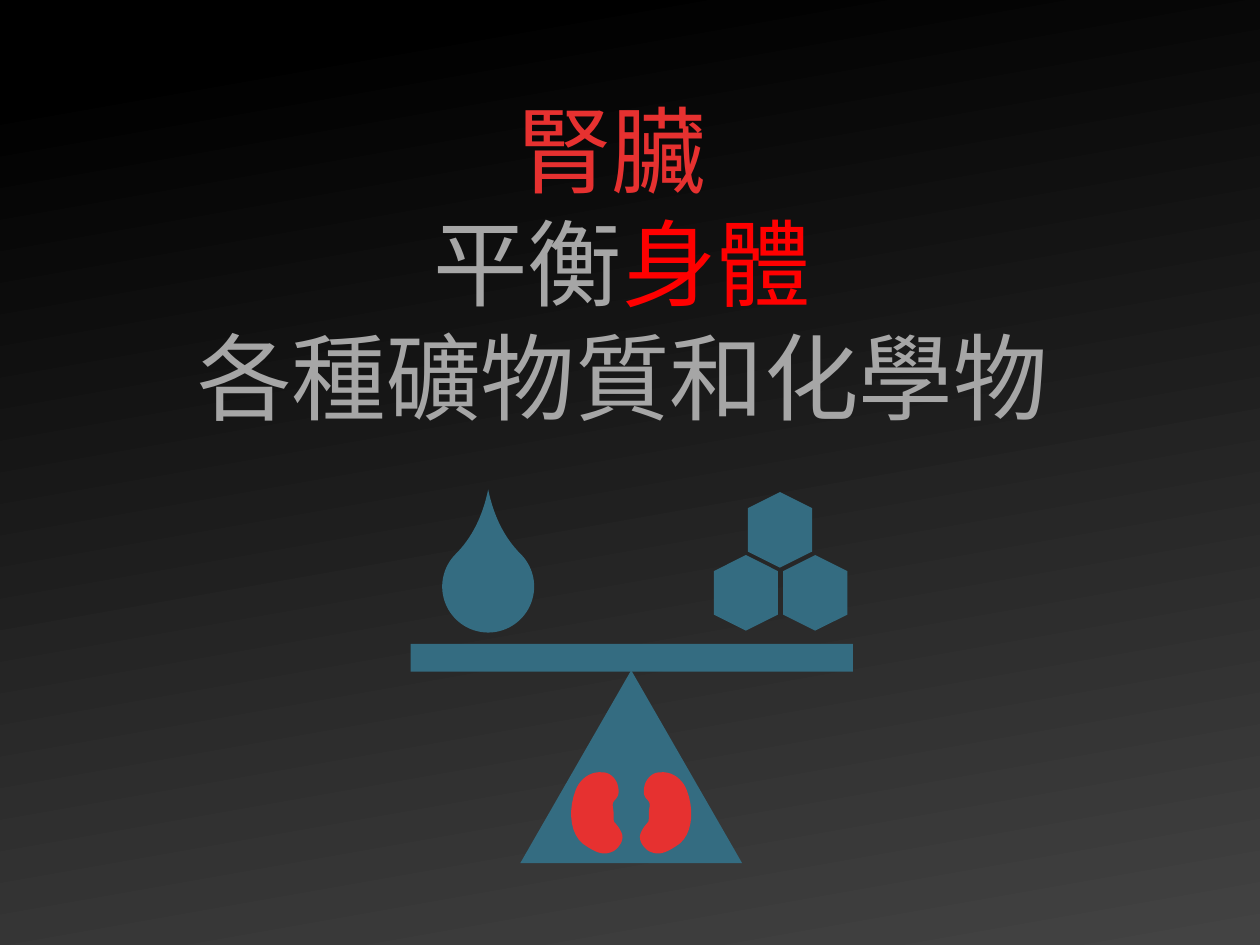
from pptx import Presentation
from pptx import util as u
from pptx.dml.color import RGBColor
from pptx.enum import shapes, text

PX = u.Inches(1) // 100
TEAL, KIDNEY_RED, GREY = "346C81", "E63130", "A6A6A6"
SHAPE = shapes.MSO_SHAPE


def paint(part, colour):
    part.fill.solid()
    part.fill.fore_color.rgb = RGBColor.from_string(colour)
    part.line.fill.background()
    part.shadow.inherit = False


def add_part(parent, kind, left, top, width, height, rotation=0):
    part = parent.shapes.add_shape(kind, left * PX, top * PX, width * PX, height * PX)
    part.rotation = rotation
    paint(part, TEAL)
    return part


prs = Presentation()
prs.slide_width, prs.slide_height = 1000 * PX, 750 * PX
slide = prs.slides.add_slide(prs.slide_layouts[6])

backdrop = slide.background.fill
backdrop.gradient()
backdrop.gradient_angle = 280
for stop, (position, colour) in zip(backdrop.gradient_stops, [(0.08, "000000"), (1, "434343")]):
    stop.position = position
    stop.color.rgb = RGBColor.from_string(colour)

headline = slide.shapes.add_textbox(36 * PX, 68 * PX, 916 * PX, 283 * PX).text_frame
headline.word_wrap = True
headline.auto_size = text.MSO_AUTO_SIZE.SHAPE_TO_FIT_TEXT
first, second = headline.paragraphs[0], headline.add_paragraph()
for line in (first, second):
    line.alignment = text.PP_ALIGN.CENTER
    line.font.size = u.Pt(54)
    line.font.name = "Arial"
for line, words, colour in [
    (first, "腎臟 ", KIDNEY_RED),
    (first, "平衡", GREY),
    (first, "身體", "FF0000"),
    (second, "各種礦物質和化學物", GREY),
]:
    run = line.add_run()
    run.text = words
    run.font.color.rgb = RGBColor.from_string(colour)
    if colour == KIDNEY_RED:
        line.add_line_break()

balance = slide.shapes.add_group_shape()
add_part(balance, SHAPE.ISOSCELES_TRIANGLE, 413, 532, 176, 153)
add_part(balance, SHAPE.RECTANGLE, 326, 511, 351, 22)

kidney_start = (487, 645)
kidney_curves = [
    [(487, 641), (485, 638), (488, 635)],
    [(491, 632), (492, 629), (490, 622)],
    [(487, 615), (482, 613), (478, 613)],
    [(468, 612), (460, 619), (457, 627)],
    [(450, 645), (453, 665), (466, 672)],
    [(474, 677), (479, 679), (486, 676)],
    [(489, 675), (495, 669), (494, 663)],
    [(493, 659), (490, 655), (488, 653)],
    [(487, 652), (487, 651), (487, 645)],
]
STEPS = 10
outline = [kidney_start]
for a, b, end in kidney_curves:
    start = outline[-1]
    for step in range(1, STEPS + 1):
        t = step / STEPS
        s = 1 - t
        outline.append(tuple(
            s**3 * p + 3 * s * s * t * q + 3 * s * t * t * r + t**3 * e
            for p, q, r, e in zip(start, a, b, end)
        ))
mirrored = [(1002 - x, y) for x, y in outline]
for points in (outline, mirrored):
    points = [(x * PX, y * PX) for x, y in points]
    builder = balance.shapes.build_freeform(*points[0])
    builder.add_line_segments(points[1:], close=True)
    paint(builder.convert_to_shape(), KIDNEY_RED)

drop = add_part(slide, SHAPE.TEAR, 351, 429, 73, 73, 315)
drop.adjustments[0] = 1.493

minerals = slide.shapes.add_group_shape()
for left, top in [(562, 445), (589, 395), (617, 445)]:
    add_part(minerals, SHAPE.HEXAGON, left, top, 60, 51, 270)

prs.save("out.pptx")
